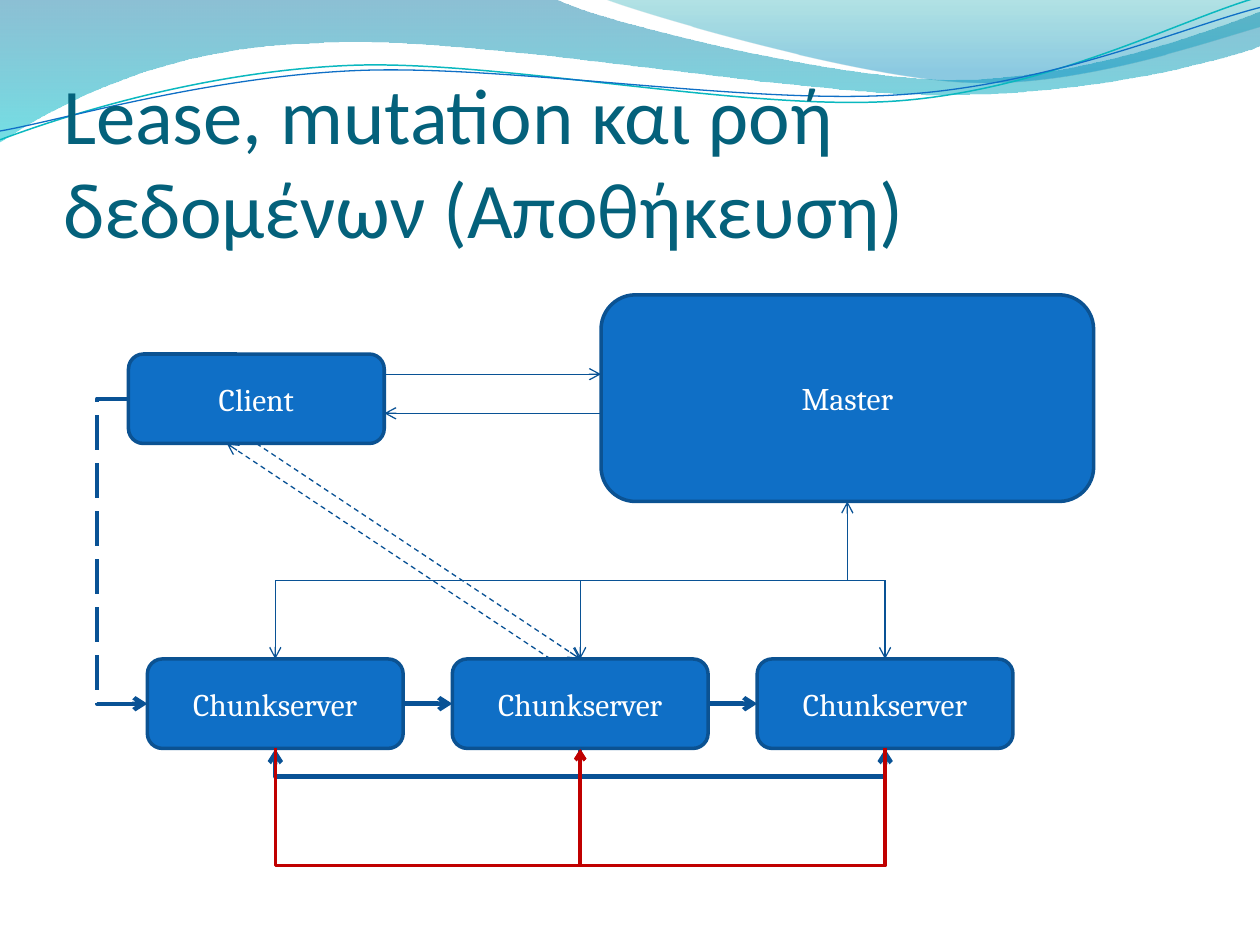
import math

import lxml.etree
import pptx
import pptx.dml.color
import pptx.enum.dml
import pptx.enum.shapes
import pptx.enum.text
import pptx.oxml.ns
import pptx.util

Inches = pptx.util.Inches
Pt = pptx.util.Pt
RGBColor = pptx.dml.color.RGBColor
DASH = pptx.enum.dml.MSO_LINE
CONNECTOR = pptx.enum.shapes.MSO_CONNECTOR
qn = pptx.oxml.ns.qn

TITLE = RGBColor(0x04, 0x61, 0x7B)
BLUE = RGBColor(0x0F, 0x6F, 0xC6)
BORDER = RGBColor(0x0B, 0x52, 0x92)
ARROW = RGBColor(0x09, 0x52, 0x95)
RED = RGBColor(0xC0, 0x00, 0x00)
TEAL = RGBColor(0x0A, 0xB8, 0xBF)
WHITE = RGBColor(0xFF, 0xFF, 0xFF)
BAND_STOPS = [(0, RGBColor(0x00, 0x74, 0xA1), 45), (1, RGBColor(0x00, 0xC6, 0xCF), 55)]
CORNER_STOPS = [(0, RGBColor(0x00, 0xA1, 0xA9), 30), (0.8, RGBColor(0x00, 0x8B, 0xBF), 45)]

TOP, LEFT, BOTTOM, RIGHT = range(4)
TILT = -2.7


def apply(target, values):
    for name, value in values.items():
        setattr(target, name, value)


def untilt(point, center):
    """Place of a point before its shape is turned by TILT about center."""
    x, y = point[0] - center[0], point[1] - center[1]
    cos, sin = math.cos(math.radians(-TILT)), math.sin(math.radians(-TILT))
    return center[0] + x * cos - y * sin, center[1] + x * sin + y * cos


def side(box, index):
    """Middle of a side of a box, in inches."""
    x, y, width, height = (v / Inches(1) for v in (box.left, box.top, box.width, box.height))
    return [(x + width / 2, y), (x, y + height / 2),
            (x + width / 2, y + height), (x + width, y + height / 2)][index]


class Diagram:
    title_font = {"name": "Calibri", "size": Pt(45), "bold": False}
    box_font = {"name": "Cambria", "size": Pt(18)}

    def __init__(self, page):
        self.page = page
        self.shapes = page.shapes

    def outline(self, segments, close=False, center=None):
        """Path of segments of two numbers (line) or six (Bezier curve)."""
        points = [s[i:i + 2] for s in segments for i in range(0, len(s), 2)]
        if center:
            points = [untilt(point, center) for point in points]
        points = [(x * 1000, y * 1000) for x, y in points]
        builder = self.shapes.build_freeform(*points[0], scale=Inches(1) / 1000)
        builder.add_line_segments(points[1:], close=close)
        shape = builder.convert_to_shape()
        shape.shadow.inherit = False
        lines = iter(list(shape.element.spPr.iter(qn("a:lnTo"))))
        for segment in segments[1:]:
            first = next(lines)
            if len(segment) == 6:
                first.tag = qn("a:cubicBezTo")
                for line in (next(lines), next(lines)):
                    first.append(line[0])
                    line.getparent().remove(line)
        return shape

    def wave(self, segments, stops):
        shape = self.outline(segments, close=True)
        shape.line.fill.background()
        shape.fill.gradient()
        shape.fill.gradient_angle = 270
        for stop, (position, color, _) in zip(shape.fill.gradient_stops, stops):
            stop.position = position
            stop.color.rgb = color
        colors = shape.element.spPr.iter(qn("a:srgbClr"))
        for color, (_, _, opacity) in zip(colors, stops):
            lxml.etree.SubElement(color, qn("a:alpha"), val=str(opacity * 1000))

    def curve(self, segments, center, color, width):
        shape = self.outline(segments, center=center)
        shape.rotation = TILT
        shape.fill.background()
        shape.line.color.rgb = color
        shape.line.width = Pt(width)

    def title(self, text):
        box = self.shapes.title
        self.shapes.element.append(box.element)  # in front of the waves
        apply(box, {"left": Inches(0.5), "top": Inches(0.77),
                    "width": Inches(9), "height": Inches(1.25)})
        frame = box.text_frame
        apply(frame, {"text": text, "word_wrap": True,
                      "auto_size": pptx.enum.text.MSO_AUTO_SIZE.NONE,
                      "vertical_anchor": pptx.enum.text.MSO_ANCHOR.BOTTOM,
                      "margin_left": 0, "margin_right": 0,
                      "margin_top": Inches(0.05), "margin_bottom": 0})
        para = frame.paragraphs[0]
        para.alignment = pptx.enum.text.PP_ALIGN.LEFT
        apply(para.runs[0].font, self.title_font)
        para.runs[0].font.color.rgb = TITLE

    def box(self, text, x, y, width=2.03, height=0.71):
        kind = pptx.enum.shapes.MSO_SHAPE.ROUNDED_RECTANGLE
        box = self.shapes.add_shape(kind, *map(Inches, (x, y, width, height)))
        box.shadow.inherit = False
        box.fill.solid()
        box.fill.fore_color.rgb = BLUE
        box.line.color.rgb = BORDER
        box.line.width = Pt(2)
        frame = box.text_frame
        apply(frame, {"text": text, "word_wrap": True,
                      "vertical_anchor": pptx.enum.text.MSO_ANCHOR.MIDDLE})
        para = frame.paragraphs[0]
        para.alignment = pptx.enum.text.PP_ALIGN.CENTER
        apply(para.runs[0].font, self.box_font)
        para.runs[0].font.color.rgb = WHITE
        return box

    def finish(self, line, color, width, dash):
        line.line.color.rgb = color
        apply(line.line, {"width": Pt(width), "dash_style": dash})
        properties = line.element.spPr
        lxml.etree.SubElement(properties.find(qn("a:ln")), qn("a:tailEnd"), type="arrow")
        lxml.etree.SubElement(properties, qn("a:effectLst"))

    def arrow(self, start, end, width=0.75, dash=None):
        """Straight arrow; each end is a point or a (box, side) pair."""
        points = [side(*e) if hasattr(e[0], "left") else e for e in (start, end)]
        line = self.shapes.add_connector(
            CONNECTOR.STRAIGHT, *(Inches(v) for point in points for v in point))
        for place, join in ((start, line.begin_connect), (end, line.end_connect)):
            if hasattr(place[0], "left"):
                join(*place)
        self.finish(line, ARROW, width, dash)

    def elbow(self, start, end, bend, color=ARROW, width=0.75, dash=None, upright=True):
        """Arrow in three parts; bend is the y (upright) or x of the middle part."""
        dx, dy = end[0] - start[0], end[1] - start[1]
        along, across = (dy, dx) if upright else (dx, dy)
        length, breadth = max(abs(along), 0.01), abs(across)
        x, y = start[0] + (dx - length) / 2, start[1] + (dy - breadth) / 2
        line = self.shapes.add_connector(
            CONNECTOR.ELBOW, *map(Inches, (x, y, x + length, y + breadth)))
        if upright:
            turn, flip = (270, "flipV") if dy < 0 else (270, "flipH") if dx > 0 else (90, None)
            frame = line.element.spPr.find(qn("a:xfrm"))
            frame.set("rot", str(turn * 60000))
            if flip:
                frame.set(flip, "1")
        offset = abs(bend - start[1]) if upright else bend - start[0]
        guides = line.element.spPr.find(qn("a:prstGeom")).get_or_add_avLst()
        lxml.etree.SubElement(guides, qn("a:gd"), name="adj1",
                              fmla=f"val {round(offset / length * 100000)}")
        self.finish(line, color, width, dash)


def main():
    deck = pptx.Presentation()
    deck.slide_width, deck.slide_height = Inches(10), Inches(7.5)
    diagram = Diagram(deck.slides.add_slide(deck.slide_layouts[5]))

    diagram.wave([(0, 0), (4.4, -0.01), (4.76, 0.17, 6.64, 0.63, 7.58, 0.63),
                  (8.53, 0.63, 9.58, 0.26, 10, 0.09), (10.01, 0.36),
                  (9.83, 0.44, 8.7, 0.76, 7.46, 0.75), (6.22, 0.75, 3.82, 0.28, 2.57, 0.34),
                  (1.29, 0.36, 0.46, 0.83, -0.01, 1.13), (0, 0)], BAND_STOPS)
    diagram.wave([(4.79, -0.01), (5.09, 0.11, 6.82, 0.62, 7.69, 0.65),
                  (8.56, 0.69, 9.61, 0.32, 10, 0.21), (10, 0), (4.79, -0.01)], CORNER_STOPS)
    diagram.curve([(0, 1.11), (0.48, 0.93, 1.58, 0.57, 2.77, 0.52),
                   (3.95, 0.47, 5.93, 0.89, 7.13, 0.8),
                   (8.33, 0.71, 9.38, 0.15, 9.98, -0.02)], (4.99, 0.58), TEAL, 0.85)
    diagram.curve([(0, 1.04), (0.47, 0.96, 1.64, 0.61, 2.83, 0.56),
                   (4.03, 0.51, 5.97, 0.84, 7.17, 0.75),
                   (8.36, 0.67, 9.41, 0.21, 10, 0.06)], (5, 0.59), BLUE, 0.75)
    diagram.title("Lease, mutation και ροή δεδοµένων (Αποθήκευση)")

    client = diagram.box("Client", 1.02, 2.81)
    servers = [diagram.box("Chunkserver", 1.17 + 2.42 * i, 5.23) for i in range(3)]
    master = diagram.box("Master", 4.77, 2.34, 3.91, 1.64)
    first, primary, last = servers

    master_bottom = side(master, BOTTOM)
    for server in reversed(servers):
        diagram.elbow(master_bottom, side(server, TOP), 4.61)
    diagram.elbow(side(last, TOP), master_bottom, 4.61)

    diagram.arrow((3.05, 2.97), (4.77, 2.97))
    diagram.arrow((4.77, 3.28), (3.05, 3.28))
    diagram.arrow((client, BOTTOM), (primary, TOP), dash=DASH.DASH)
    diagram.arrow((4.37, 5.23), (1.8, 3.52), dash=DASH.DASH)

    diagram.elbow(side(client, LEFT), side(first, LEFT), 0.77,
                  width=2.5, dash=DASH.LONG_DASH, upright=False)
    for sender, receiver in zip(servers, servers[1:]):
        diagram.arrow((sender, RIGHT), (receiver, LEFT), 2.5, DASH.LONG_DASH)

    for replica in (first, last):
        diagram.elbow(side(primary, BOTTOM), side(replica, BOTTOM), 6.17, width=2.5)
    for replica in (last, first):
        diagram.elbow(side(replica, BOTTOM), side(primary, BOTTOM), 6.89, RED, 2)

    deck.save("out.pptx")


if __name__ == "__main__":
    main()
